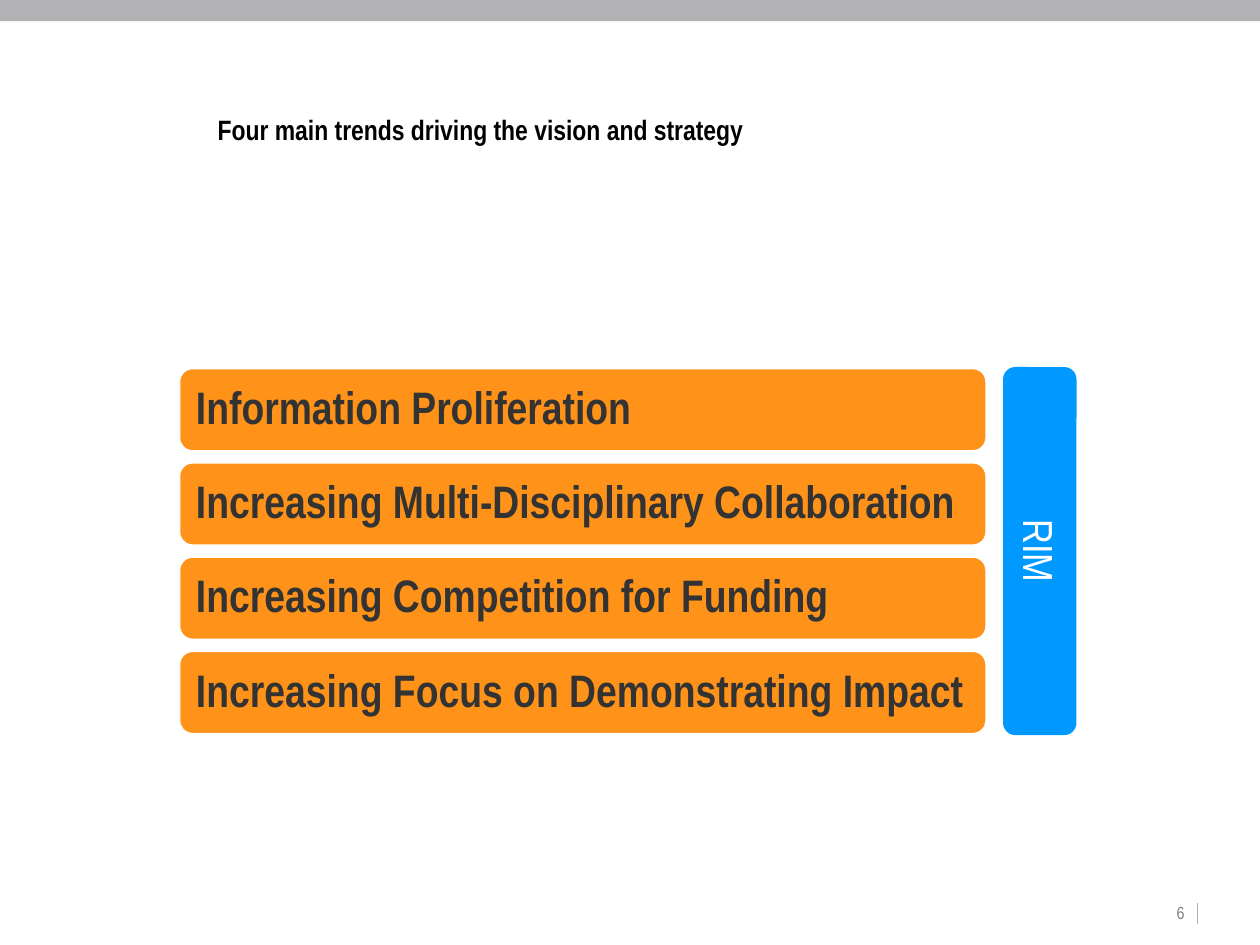
from dataclasses import dataclass

from lxml import etree
from pptx import Presentation
from pptx.dml.color import RGBColor
from pptx.enum.shapes import MSO_CONNECTOR, MSO_SHAPE
from pptx.enum.text import MSO_ANCHOR, PP_ALIGN
from pptx.oxml.ns import qn
from pptx.util import Cm, Pt

RECT, ROUND = MSO_SHAPE.RECTANGLE, MSO_SHAPE.ROUNDED_RECTANGLE
LINE = MSO_CONNECTOR.STRAIGHT
TOP, MIDDLE = MSO_ANCHOR.TOP, MSO_ANCHOR.MIDDLE
LEFT, CENTER, RIGHT = PP_ALIGN.LEFT, PP_ALIGN.CENTER, PP_ALIGN.RIGHT


@dataclass(frozen=True)
class Theme:
    font: str = "Arial Narrow"
    black: str = "000000"
    dark: str = "333333"
    gray: str = "808080"
    rule: str = "B2B2B4"
    orange: str = "FF9218"
    blue: str = "0099FF"
    white: str = "FFFFFF"
    title: int = 16
    trend: int = 26
    side: int = 24
    page: int = 10


THEME = Theme()
TRENDS = (
    "Information Proliferation",
    "Increasing Multi-Disciplinary Collaboration",
    "Increasing Competition for Funding",
    "Increasing Focus on Demonstrating Impact",
)


def rgb(code):
    return RGBColor.from_string(code)


def add_block(slide, kind, box, fill, edge=None):
    block = slide.shapes.add_shape(kind, *map(Cm, box))
    block.shadow.inherit = False
    block.fill.solid()
    block.fill.fore_color.rgb = rgb(fill)
    if edge:
        block.line.color.rgb = rgb(edge)
        block.line.width = Pt(2)
    else:
        block.line.fill.background()
    return block


def set_text(shape, text, size, color, bold=False, align=LEFT,
             anchor=MIDDLE, inset=(0.25, 0.13, 0.25, 0.13)):
    frame = shape.text_frame
    frame.text = text
    frame.word_wrap = True
    frame.vertical_anchor = anchor
    (frame.margin_left, frame.margin_top,
     frame.margin_right, frame.margin_bottom) = map(Cm, inset)
    para = frame.paragraphs[0]
    para.alignment = align
    font = para.runs[0].font
    font.name, font.size, font.bold = THEME.font, Pt(size), bold
    font.color.rgb = rgb(color)
    return para


def add_title(slide, box):
    label = slide.shapes.add_textbox(*map(Cm, box))
    set_text(label, "Four main trends driving the vision and strategy",
             THEME.title, THEME.black, bold=True, inset=(0.58, 0.45, 0.25, 0.13))


def add_trends(slide, box, gap=0.2):
    left, top, width, height = box
    pitch = (height + gap) / len(TRENDS)
    for row, text in enumerate(TRENDS):
        bar = add_block(slide, ROUND, (left, top + row * pitch, width, pitch - gap),
                        THEME.orange, THEME.white)
        # The round corners add to the inset; a slim right side keeps one line
        para = set_text(bar, text, THEME.trend, THEME.dark, bold=True,
                        inset=(0.27, 0.1, 0, 0.1))
        para.line_spacing = 0.9


def add_side(slide, box):
    # A wide bar turned a quarter clockwise about the centre of its box
    left, top, width, height = box
    shift = (height - width) / 2
    bar = add_block(slide, ROUND, (left - shift, top + shift, height, width), THEME.blue)
    bar.rotation = 90
    set_text(bar, "RIM", THEME.side, THEME.white, align=CENTER)


def add_footer(slide, box):
    left, top, width, height = box
    label = slide.shapes.add_textbox(*map(Cm, box))
    set_text(label, "6", THEME.page, THEME.gray, align=RIGHT, anchor=TOP)
    edge = left + width
    rule = slide.shapes.add_connector(
        LINE, Cm(edge), Cm(top + 0.15), Cm(edge), Cm(top + 0.57))
    rule.line.color.rgb = rgb(THEME.rule)
    rule.line.width = Pt(0.5)
    etree.SubElement(rule._element.spPr, qn("a:effectLst"))


def main():
    deck = Presentation()
    deck.slide_width, deck.slide_height = Cm(25.4), Cm(19.05)
    slide = deck.slides.add_slide(deck.slide_layouts[6])

    # Top band and heading
    add_block(slide, RECT, (0, 0, 25.4, 0.43), THEME.rule)
    add_title(slide, (3.81, 1.27, 19.69, 2.34))

    # Trends and the bar beside them
    add_trends(slide, (3.6, 7.41, 16.3, 7.4))
    add_side(slide, (20.22, 7.4, 1.48, 7.42))

    # Page number
    add_footer(slide, (20.32, 18.06, 3.81, 0.91))
    deck.save("out.pptx")


if __name__ == "__main__":
    main()
